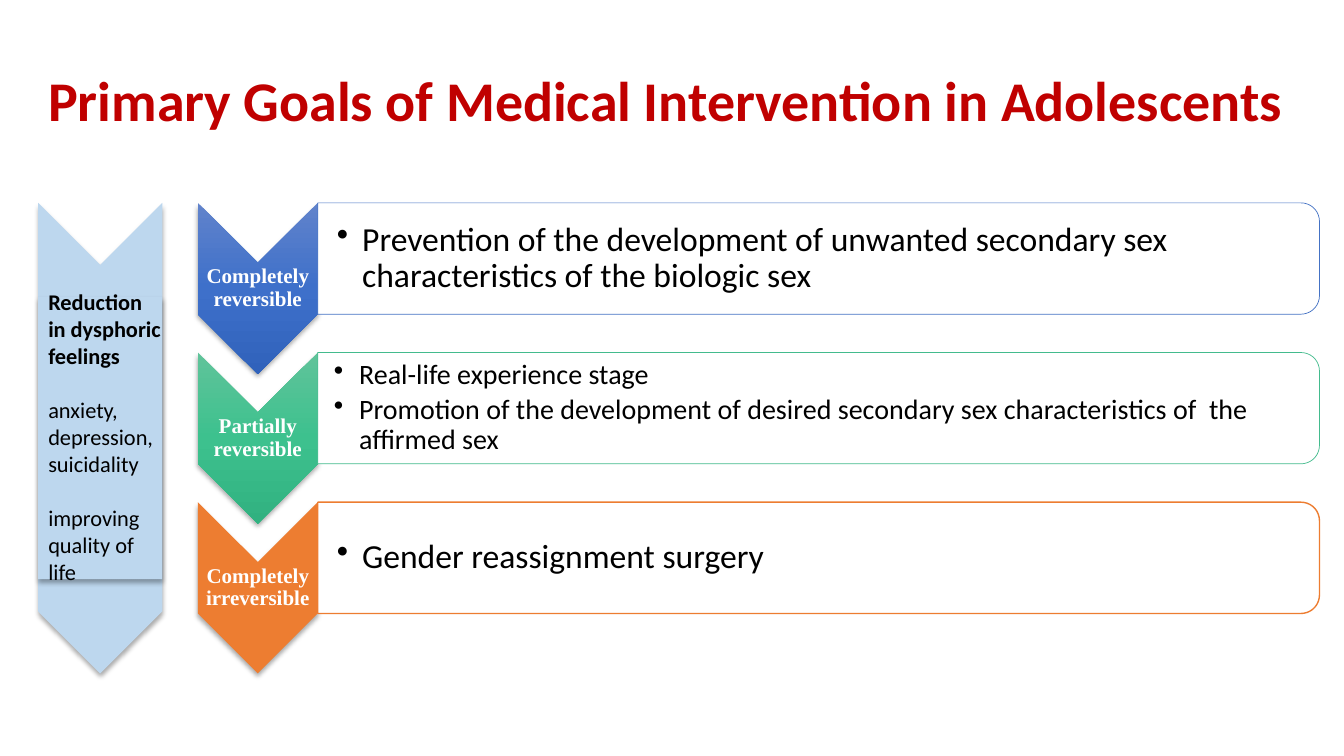
from copy import deepcopy
from math import cos, radians, sin

from lxml.etree import SubElement
from pptx import Presentation
from pptx.dml.color import RGBColor
from pptx.enum.shapes import MSO_SHAPE as Preset
from pptx.enum.text import MSO_ANCHOR as Anchor, PP_ALIGN as Align
from pptx.oxml.ns import qn
from pptx.util import Pt

color = RGBColor.from_string


def add_run(paragraph, text, size, hex_color="000000", bold=False, font_name="Calibri"):
    run = paragraph.add_run()
    run.text = text
    run.font.name = font_name
    run.font.size = Pt(size)
    run.font.bold = bold
    run.font.color.rgb = color(hex_color)


def finish_arrow(shape, fill_colors):
    """Fill with one colour or an even top-to-bottom gradient, and cast a soft shadow."""
    shape.line.fill.background()
    properties = shape._element.spPr
    if len(fill_colors) == 1:
        shape.fill.solid()
        shape.fill.fore_color.rgb = color(fill_colors[0])
    else:
        shape.fill.gradient()
        shape.fill.gradient_angle = 270
        stop_list = properties.find(".//" + qn("a:gsLst"))
        stop_list.append(deepcopy(stop_list[-1]))
        for index, stop in enumerate(shape.fill.gradient_stops):
            stop.position = index / 2
            stop.color.rgb = color(fill_colors[index])
    shape.shadow.inherit = False
    shadow = SubElement(properties.find(qn("a:effectLst")), qn("a:outerShdw"),
                        blurRad=str(Pt(3.5)), dist=str(Pt(2.2)), dir="5400000",
                        rotWithShape="0")
    shadow_color = SubElement(shadow, qn("a:srgbClr"), val="000000")
    SubElement(shadow_color, qn("a:alpha"), val="32000")


presentation = Presentation()
presentation.slide_width = Pt(960)
presentation.slide_height = Pt(540)
slide = presentation.slides.add_slide(presentation.slide_layouts[6])

# Three stages: a downward arrow and a panel each
ARROW_LEFT, PANEL_LEFT, PANEL_RIGHT = 141.3, 227, 942.5
ARROW_MIDDLE = (ARROW_LEFT + PANEL_LEFT) / 2
FIRST_TOP, ROW_PITCH, PANEL_HEIGHT = 144.9, 106.9, 79.5
NOTCH, RADIUS = 42.8, 13.2

stages = [
    ("Completely reversible", ["6183CB", "3E70CA", "3062BB"], "4472C4", 0.5, 24, 13.7,
     ["Prevention of the development of unwanted secondary sex characteristics "
      "of the biologic sex"]),
    ("Partially reversible", ["60C39A", "3DC18E", "31B180"], "43BB8D", 0.5, 20, 11.5,
     ["Real-life experience stage",
      "Promotion of the development of desired secondary sex characteristics of  the "
      "affirmed sex"]),
    ("Completely irreversible", ["ED7D31"], "ED7D31", 1, 24, 13.7,
     ["Gender reassignment surgery"]),
]

for row, (label, arrow_fill, line_color, line_width, size, inset, goals) in enumerate(stages):
    top = FIRST_TOP + row * ROW_PITCH
    bottom = top + PANEL_HEIGHT
    arrow_points = [(PANEL_LEFT, top), (PANEL_LEFT, bottom), (ARROW_MIDDLE, bottom + NOTCH),
                    (ARROW_LEFT, bottom), (ARROW_LEFT, top), (ARROW_MIDDLE, top + NOTCH)]
    panel_points = [(PANEL_LEFT, bottom), (PANEL_LEFT, top)]
    for center_y, first_angle in ((top + RADIUS, -90), (bottom - RADIUS, 0)):
        for angle in range(first_angle, first_angle + 91, 10):
            panel_points.append((PANEL_RIGHT - RADIUS + RADIUS * cos(radians(angle)),
                                 center_y + RADIUS * sin(radians(angle))))

    outlines = []
    for points in (arrow_points, panel_points):
        corners = [(Pt(x), Pt(y)) for x, y in points]
        builder = slide.shapes.build_freeform(*corners[0])
        builder.add_line_segments(corners[1:], close=True)
        outlines.append(builder.convert_to_shape())
    arrow, panel = outlines

    finish_arrow(arrow, arrow_fill)
    frame = arrow.text_frame
    frame.word_wrap = True
    frame.vertical_anchor = Anchor.MIDDLE
    frame.margin_left = frame.margin_right = Pt(0.75)
    frame.margin_top = frame.margin_bottom = Pt(43)
    paragraph = frame.paragraphs[0]
    paragraph.alignment = Align.CENTER
    paragraph.line_spacing = 0.9
    add_run(paragraph, label, 15, "FFFFFF", True, "Times New Roman")

    panel.shadow.inherit = False
    panel.fill.solid()
    panel.fill.fore_color.rgb = color("FFFFFF")
    panel.line.color.rgb = color(line_color)
    panel.line.width = Pt(line_width)
    frame = panel.text_frame
    frame.word_wrap = True
    frame.vertical_anchor = Anchor.MIDDLE
    frame.margin_left = Pt(inset)
    frame.margin_top = frame.margin_right = frame.margin_bottom = Pt(5)
    for index, goal in enumerate(goals):
        paragraph = frame.add_paragraph() if index else frame.paragraphs[0]
        paragraph.alignment = Align.LEFT
        paragraph.line_spacing = 0.9
        paragraph.space_after = Pt(size * 0.15)
        paragraph_properties = paragraph._p.get_or_add_pPr()
        paragraph_properties.set("marL", str(Pt(18)))
        paragraph_properties.set("indent", str(Pt(-18)))
        SubElement(paragraph_properties, qn("a:buChar"), char="•")
        add_run(paragraph, goal, size)

title = slide.shapes.add_textbox(Pt(27.4), Pt(43.2), Pt(924.5), Pt(55.7))
title.text_frame.word_wrap = True
add_run(title.text_frame.paragraphs[0],
        "Primary Goals of Medical Intervention in Adolescents", 40, "C00000", True)

# Tall arrow for the overall outcome
outcome = slide.shapes.add_group_shape()
tall_arrow = outcome.shapes.add_shape(Preset.CHEVRON, Pt(-96.5), Pt(268.7), Pt(336.2), Pt(88.6))
tall_arrow.rotation = 90
finish_arrow(tall_arrow, ["BDD7EE"])
backing = outcome.shapes.add_shape(Preset.RECTANGLE, Pt(27.3), Pt(212.2), Pt(88.6), Pt(201.6))
finish_arrow(backing, ["BDD7EE"])

outcome_box = outcome.shapes.add_textbox(Pt(27.4), Pt(202.3), Pt(97.9), Pt(220.3))
frame = outcome_box.text_frame
frame.word_wrap = True
outcome_blocks = [
    (["Reduction", "in dysphoric", "feelings"], True),
    (["anxiety,", "depression,", "suicidality"], False),
    (["improving", "quality of life"], False),
]
for index, (lines, bold) in enumerate(outcome_blocks):
    paragraph = frame.add_paragraph() if index else frame.paragraphs[0]
    if index:
        paragraph.space_before = Pt(19.5)
    for line_number, line in enumerate(lines):
        if line_number:
            paragraph.add_line_break()
        add_run(paragraph, line, 16, bold=bold)

presentation.save("out.pptx")
